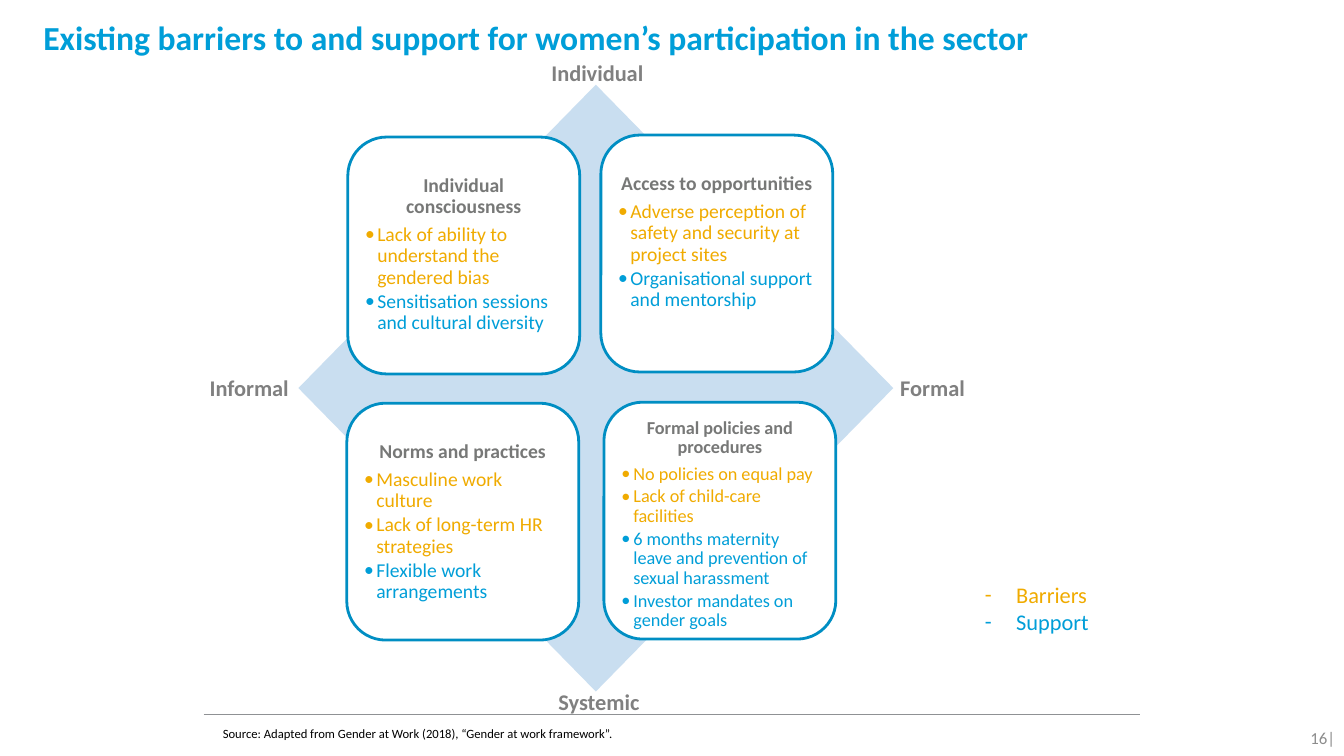
from lxml.etree import SubElement
from pptx import Presentation
from pptx.dml.color import RGBColor
from pptx.enum.shapes import MSO_CONNECTOR as LINE, MSO_SHAPE as SHAPE
from pptx.enum.text import MSO_ANCHOR as ANCHOR, PP_ALIGN as ALIGN
from pptx.oxml.ns import qn
from pptx.util import Inches, Pt

COLORS = {
    "blue": "009ED8", "amber": "F0AB00", "edge": "008EC3", "pale": "C9DEF0",
    "head": "777877", "axis": "808080", "page": "8C8C8C", "rule": "8F9194",
    "white": "FFFFFF", "black": "000000",
}
KINDS = {"barrier": "amber", "support": "blue"}

# Left, top, text size, top inset, heading, points
CARDS = [
    (3.45, 1.36, 14, 0.27, "Individual consciousness", [
        ("barrier", "Lack of ability to understand the gendered bias"),
        ("support", "Sensitisation sessions and cultural diversity")]),
    (5.96, 1.34, 14, 0.27, "Access to opportunities", [
        ("barrier", "Adverse perception of safety and security at project sites"),
        ("support", "Organisational support and mentorship")]),
    (3.44, 4, 14, 0.27, "Norms and practices", [
        ("barrier", "Masculine work culture"),
        ("barrier", "Lack of long-term HR strategies"),
        ("support", "Flexible work arrangements")]),
    (5.99, 3.99, 13, 0.05, "Formal policies and procedures", [
        ("barrier", "No policies on equal pay"),
        ("barrier", "Lack of child-care facilities"),
        ("support", "6 months maternity leave and prevention of sexual harassment"),
        ("support", "Investor mandates on gender goals")]),
]
AXES = [("Informal", 1.98, 3.66), ("Formal", 8.83, 3.66),
        ("Individual", 5.37, 0.54), ("Systemic", 5.44, 6.78)]
LEGEND = [("barrier", "Barriers"), ("support", "Support")]


def rgb(name):
    return RGBColor.from_string(COLORS[name])


def set_frame(shape, side=0.1, head=0.05, anchor=ANCHOR.TOP):
    """Wrap the text and set its side and top insets."""
    frame = shape.text_frame
    frame.word_wrap = True
    frame.vertical_anchor = anchor
    frame.margin_left = frame.margin_right = Inches(side)
    frame.margin_top, frame.margin_bottom = Inches(head), Inches(0.05)
    return frame


def add_bullet(para, mark, color, indent):
    props = para._p.get_or_add_pPr()
    props.set("marL", str(Inches(indent)))
    props.set("indent", str(-Inches(indent)))
    tint = SubElement(props, qn("a:buClr"))
    SubElement(tint, qn("a:srgbClr")).set("val", COLORS[color])
    SubElement(props, qn("a:buFont")).set("typeface", "Calibri")
    SubElement(props, qn("a:buChar")).set("char", mark)


def write(frame, text, size=16, color="black", bold=False, align=ALIGN.LEFT,
          before=None, spacing=None, mark=None, indent=0):
    """Fill the first paragraph, or add one after it."""
    para = frame.paragraphs[0]
    if para.runs:
        para = frame.add_paragraph()
    para.alignment = align
    if spacing:
        para.line_spacing = spacing
    if before:
        para.space_before = Pt(before)
    if mark:
        add_bullet(para, mark, color, indent)
    run = para.add_run()
    run.text = text
    font = run.font
    font.name, font.size, font.bold = "Calibri", Pt(size), bold
    font.color.rgb = rgb(color)


def add_box(slide, left, top, width, height, **inset):
    box = slide.shapes.add_textbox(*map(Inches, (left, top, width, height)))
    return set_frame(box, **inset)


def add_form(slide, form, left, top, width, height, fill, edge=None):
    shape = slide.shapes.add_shape(
        form, *map(Inches, (left, top, width, height)))
    shape.shadow.inherit = False
    shape.fill.solid()
    shape.fill.fore_color.rgb = rgb(fill)
    if edge:
        shape.line.color.rgb = rgb(edge)
        shape.line.width = Pt(2)
    else:
        shape.line.fill.background()
    return shape


def add_card(slide, left, top, size, inset, head, points):
    card = add_form(slide, SHAPE.ROUNDED_RECTANGLE, left, top, 2.3, 2.35,
                    "white", "edge")
    card.adjustments[0] = 0.167
    frame = set_frame(card, side=0.06, head=inset)
    write(frame, head, size=size, color="head", bold=True,
          align=ALIGN.CENTER, spacing=0.9)
    for place, (kind, text) in enumerate(points):
        write(frame, text, size=size, color=KINDS[kind], spacing=0.9,
              before=2 if place else 4.9, mark="•", indent=0.12)


def add_rule(slide, left, right, top):
    rule = slide.shapes.add_connector(
        LINE.STRAIGHT, *map(Inches, (left, top, right, top)))
    rule.line.color.rgb = rgb("rule")
    rule.line.width = Pt(0.75)
    SubElement(rule._element.spPr, qn("a:effectLst"))


def main():
    deck = Presentation()
    deck.slide_width, deck.slide_height = Inches(13.33), Inches(7.5)
    slide = deck.slides.add_slide(deck.slide_layouts[6])

    # Footer and title
    add_rule(slide, 2.02, 11.31, 7.09)
    page = add_box(slide, 12.49, 7.12, 0.85, 0.4, anchor=ANCHOR.MIDDLE)
    write(page, "16|", size=12, color="page", align=ALIGN.RIGHT)
    title = add_box(slide, 0.43, 0.12, 12.34, 0.87, side=0)
    write(title, "Existing barriers to and support for women’s participation "
          "in the sector", size=24, color="blue", bold=True)
    source = add_box(slide, 2.21, 7.2, 8.97, 0.28, side=0, head=0)
    write(source, "Source: Adapted from Gender at Work (2018), "
          "“Gender at work framework”.", size=9)

    # Diamond with four cards
    add_form(slide, SHAPE.DIAMOND, 2.96, 0.84, 5.9, 6.02, "pale")
    for card in CARDS:
        add_card(slide, *card)

    # Axis ends
    for text, left, top in AXES:
        label = add_box(slide, left, top, 1.21, 0.37)
        write(label, text, color="axis", bold=True)

    # Legend
    legend = add_box(slide, 9.67, 5.72, 1.51, 0.64)
    for kind, text in LEGEND:
        write(legend, text, color=KINDS[kind], mark="-", indent=0.31)

    deck.save("out.pptx")


if __name__ == "__main__":
    main()
